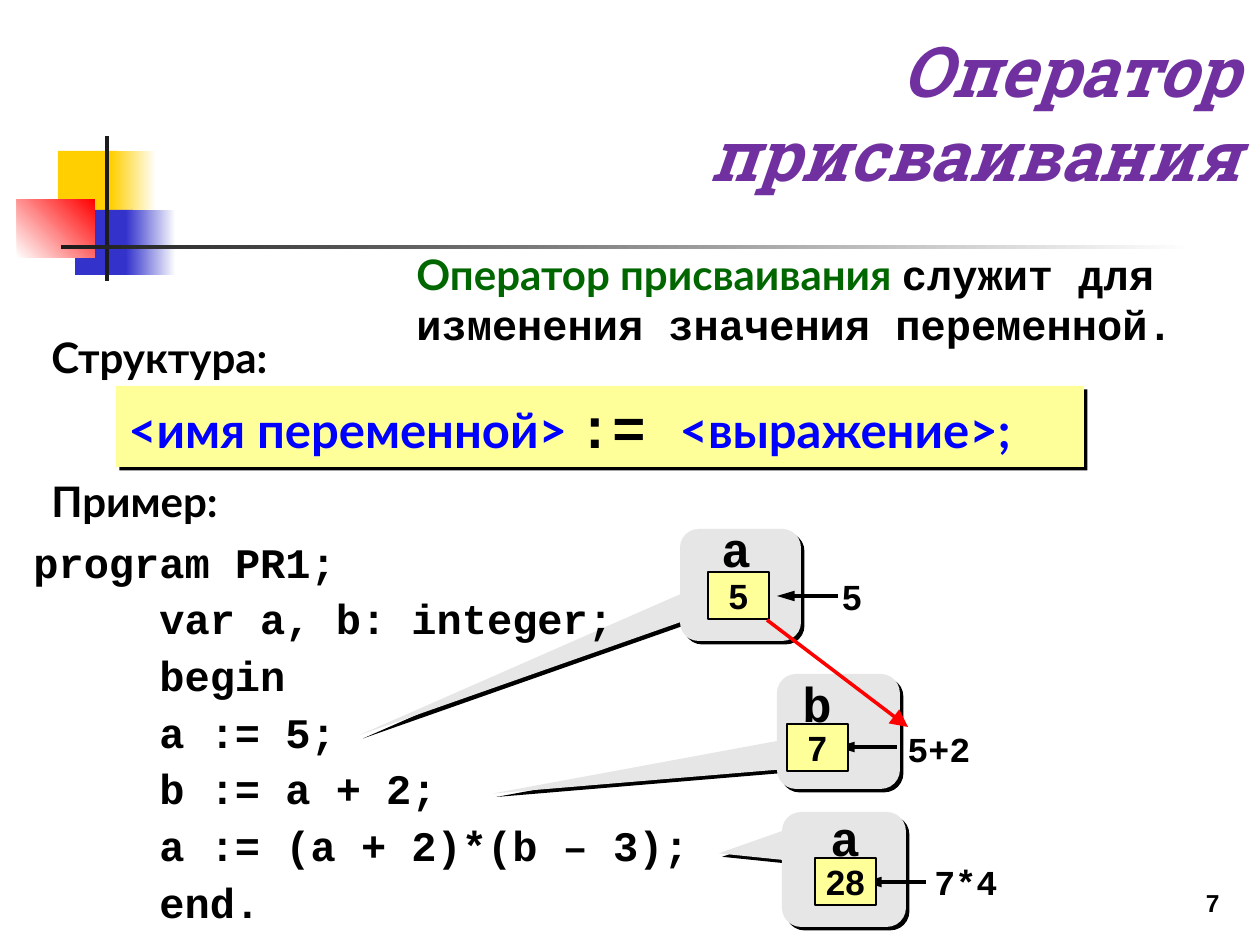
from dataclasses import dataclass

import lxml.etree
import pptx
import pptx.dml.color
import pptx.enum.dml
import pptx.enum.shapes
import pptx.enum.text
import pptx.oxml.ns
import pptx.util

SHAPES = pptx.enum.shapes.MSO_SHAPE
ALIGN = pptx.enum.text.PP_ALIGN
ANCHOR = pptx.enum.text.MSO_ANCHOR
qn = pptx.oxml.ns.qn

BLACK, YELLOW, GREY = "000000", "FFFF99", "E6E6E6"
MONO, SANS, HEADING = "Courier New", "Lato", "Roboto Slab"


@dataclass
class Box:
    left: int
    top: int
    width: int
    height: int


@dataclass
class Piece:
    text: str
    size: int = 24
    font: str = MONO
    color: str = BLACK
    italic: bool = False


@dataclass
class Band:
    box: Box
    start: str
    end: str = ""
    angle: int = 0


@dataclass
class Memory:
    callout: Box
    tip: tuple[float, float]
    name: str
    name_at: tuple[int, int]
    value: str
    value_at: tuple[int, int]
    source: str
    source_at: tuple[int, int]
    arrow: tuple[int, int, int]


BANDS = [
    Band(Box(58, 151, 60, 66), "FFCF01"),
    Band(Box(111, 151, 45, 66), "FFCF01", "FFFFFF"),
    Band(Box(75, 210, 58, 65), "3333CC"),
    Band(Box(126, 210, 50, 65), "3333CC", "FFFFFF"),
    Band(Box(17, 199, 78, 59), "FFFFFF", "FF0000", 45),
    Band(Box(105, 136, 4, 145), "1C1C1C"),
    Band(Box(61, 245, 1134, 4), "1C1C1C", "FFFFFF"),
]

MEMORY = [
    Memory(Box(680, 529, 121, 112), (-3.15, 1.34), "a", (709, 512),
           "5", (708, 572), "5", (822, 573), (838, 777, 596)),
    Memory(Box(777, 674, 123, 115), (-2.81, 0.54), "b", (790, 667),
           "7", (787, 724), "5+2", (909, 725), (897, 837, 747)),
    Memory(Box(782, 812, 124, 115), (-1.01, -0.14), "a", (818, 801),
           "28", (815, 858), "7*4", (936, 858), (926, 864, 882)),
]

CODE = [
    "program PR1;",
    "\tvar a, b: integer;",
    "\tbegin",
    "\ta := 5;",
    "\tb := a + 2;",
    "\ta := (a + 2)*(b – 3);",
    "\tend.",
]


def px(length: int) -> pptx.util.Emu:
    return pptx.util.Emu(round(length * 914400 / 126))


def rgb(color: str) -> pptx.dml.color.RGBColor:
    return pptx.dml.color.RGBColor.from_string(color)


def place(shape, box: Box) -> None:
    shape.left, shape.top = px(box.left), px(box.top)
    shape.width, shape.height = px(box.width), px(box.height)


def write(shape, paragraphs: list[list[Piece]], align=ALIGN.LEFT, anchor=ANCHOR.TOP,
          wrap: bool = True, before: float = 0, indent: tuple[int, int] = (0, 0)) -> None:
    frame = shape.text_frame
    frame.word_wrap = wrap
    frame.auto_size = pptx.enum.text.MSO_AUTO_SIZE.NONE
    frame.vertical_anchor = anchor
    for index, pieces in enumerate(paragraphs):
        paragraph = frame.add_paragraph() if index else frame.paragraphs[0]
        paragraph.alignment = align
        paragraph.space_before = pptx.util.Pt(before)
        properties = paragraph._p.get_or_add_pPr()
        properties.set("marL", str(px(indent[0])))
        properties.set("indent", str(px(indent[1])))
        properties.set("defTabSz", str(px(126)))
        for piece in pieces:
            run = paragraph.add_run()
            run.text = piece.text
            run.font.size = pptx.util.Pt(piece.size)
            run.font.name = piece.font
            run.font.bold = True
            run.font.italic = piece.italic
            run.font.color.rgb = rgb(piece.color)


def add_text(slide, box: Box, paragraphs: list[list[Piece]], **layout) -> None:
    label = slide.shapes.add_textbox(0, 0, 0, 0)
    place(label, box)
    write(label, paragraphs, **layout)


def add_block(slide, box: Box, color: str, kind=SHAPES.RECTANGLE, shadow: bool = False):
    block = slide.shapes.add_shape(kind, 0, 0, 0, 0)
    place(block, box)
    block.fill.solid()
    block.fill.fore_color.rgb = rgb(color)
    block.line.fill.background()
    block.shadow.inherit = False
    if shadow:
        effects = block._element.spPr.find(qn("a:effectLst"))
        outer = lxml.etree.SubElement(effects, qn("a:outerShdw"),
                                      dist="35921", dir="2700000", algn="ctr", rotWithShape="0")
        lxml.etree.SubElement(outer, qn("a:srgbClr"), val=BLACK)
    return block


def add_band(slide, band: Band) -> None:
    block = add_block(slide, band.box, band.start)
    if band.end:
        block.fill.gradient()
        block.fill.gradient_angle = band.angle
        for stop, color in zip(block.fill.gradient_stops, (band.start, band.end)):
            stop.color.rgb = rgb(color)


def add_arrow(slide, start: tuple[int, int], end: tuple[int, int],
              color: str = BLACK, head_width: str = "med") -> None:
    arrow = slide.shapes.add_connector(pptx.enum.shapes.MSO_CONNECTOR.STRAIGHT,
                                       *map(px, start + end))
    arrow.line.color.rgb = rgb(color)
    arrow.line.width = pptx.util.Pt(2)
    properties = arrow._element.spPr
    lxml.etree.SubElement(properties.find(qn("a:ln")), qn("a:tailEnd"),
                          type="triangle", w=head_width, len="lg")
    lxml.etree.SubElement(properties, qn("a:effectLst"))


def add_memory(slide, cell: Memory) -> None:
    callout = add_block(slide, cell.callout, GREY, SHAPES.ROUNDED_RECTANGULAR_CALLOUT, True)
    callout.adjustments[0], callout.adjustments[1] = cell.tip
    add_text(slide, Box(*cell.name_at, 54, 72), [[Piece(cell.name, 28)]], wrap=False)
    centred = dict(align=ALIGN.CENTER, anchor=ANCHOR.MIDDLE, wrap=False)
    add_text(slide, Box(*cell.source_at, 60, 47),
             [[Piece(cell.source, 20, MONO if len(cell.source) > 1 else "Arial")]], **centred)
    start, end, height = cell.arrow
    add_arrow(slide, (start, height), (end, height))
    value = add_block(slide, Box(*cell.value_at, 61, 47), YELLOW)
    value.line.color.rgb = rgb(BLACK)
    value.line.width = pptx.util.Pt(1)
    write(value, [[Piece(cell.value, 20, "Arial")]], **centred)


def main() -> None:
    deck = pptx.Presentation()
    deck.slide_width, deck.slide_height = px(1260), px(945)
    slide = deck.slides.add_slide(deck.slide_layouts.get_by_name("Title Only"))

    for band in BANDS:
        add_band(slide, band)
    title = slide.shapes.title
    place(title, Box(401, 21, 851, 183))
    write(title, [[Piece("Оператор присваивания", 40, HEADING, "7030A0", True)]],
          align=ALIGN.RIGHT)
    add_text(slide, Box(970, 861, 262, 63), [[Piece("7", 14, "Arial")]],
             align=ALIGN.RIGHT, anchor=ANCHOR.BOTTOM)

    for heading, top in (("Структура:", 325), ("Пример:", 469)):
        add_text(slide, Box(39, top, 223, 64), [[Piece(heading, 24, SANS)]],
                 wrap=False, indent=(24, -24))
    formula = add_block(slide, Box(116, 386, 968, 81), YELLOW, shadow=True)
    write(formula, [[Piece("<имя переменной> ", 28, SANS, "0000FF"),
                     Piece(":= ", 32),
                     Piece("<выражение>;", 28, SANS, "0000FF")]])
    add_text(slide, Box(107, 242, 1153, 115),
             [[Piece("\tОператор присваивания ", 24, SANS, "006600"),
               Piece("служит для изменения значения переменной.")]], indent=(297, -100))

    for cell in MEMORY:
        add_memory(slide, cell)
    add_arrow(slide, (767, 620), (908, 727), "FF0000", "lg")
    add_text(slide, Box(21, 530, 703, 415), [[Piece(line)] for line in CODE], before=3.6)
    deck.save("out.pptx")


if __name__ == "__main__":
    main()
